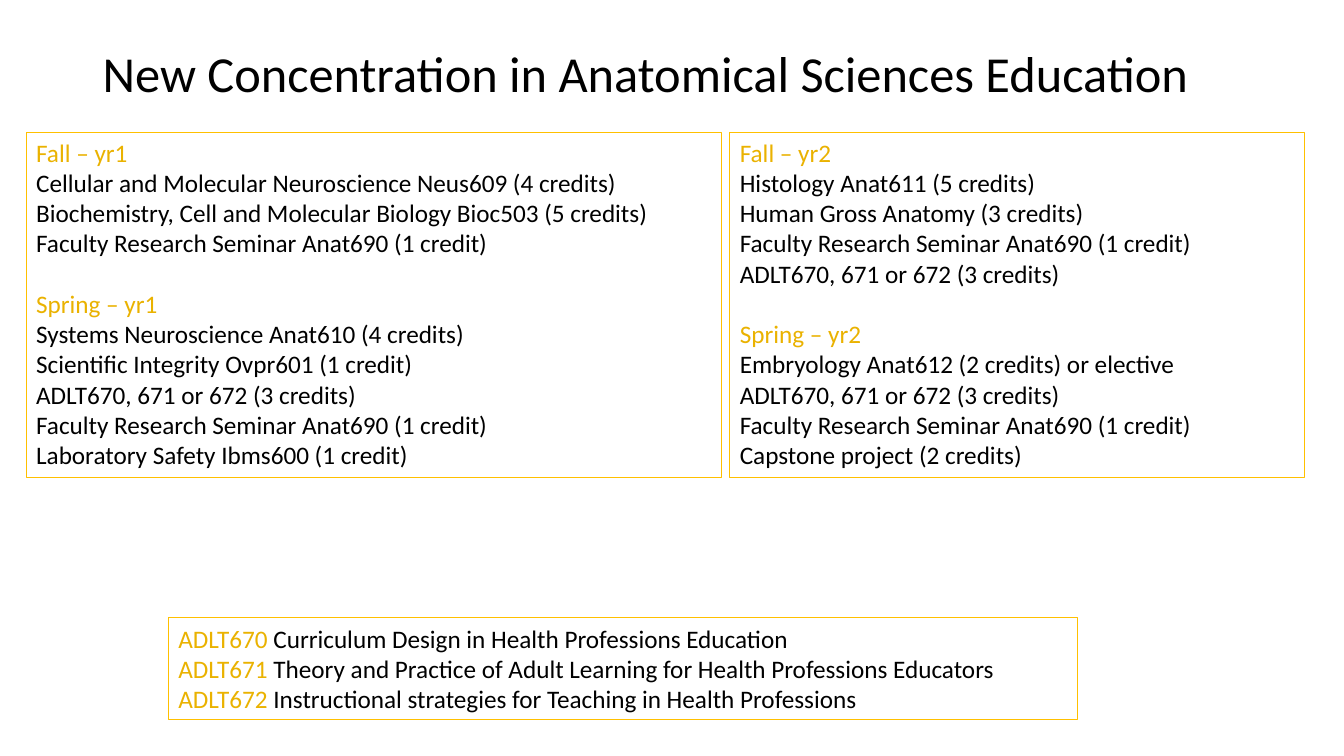
import pptx
import pptx.util
import pptx.dml.color
import pptx.enum.shapes
import pptx.enum.text
from dataclasses import dataclass

Pt = pptx.util.Pt
RGB = pptx.dml.color.RGBColor


@dataclass(frozen=True)
class Theme:
    font: str = "Calibri"
    title: float = 36
    body: float = 18
    text: RGB = RGB.from_string("000000")
    accent: RGB = RGB.from_string("EAB200")
    border: RGB = RGB.from_string("FFC000")


theme = Theme()
prs = pptx.Presentation()
prs.slide_width = pptx.util.Inches(13.33)
prs.slide_height = pptx.util.Inches(7.5)
W, H = prs.slide_width, prs.slide_height
s = prs.slides.add_slide(prs.slide_layouts[6])


def add_box(left, top, width, height, paragraphs):
    """Add an outlined box, placed in shares of the slide; each paragraph is (runs, space before)."""
    sp = s.shapes.add_shape(pptx.enum.shapes.MSO_SHAPE.RECTANGLE,
                            int(left * W), int(top * H), int(width * W), int(height * H))
    sp.shadow.inherit = False
    sp.fill.background()
    sp.line.color.rgb = theme.border
    sp.line.width = Pt(0.75)
    tf = sp.text_frame
    tf.word_wrap = True
    tf.vertical_anchor = pptx.enum.text.MSO_ANCHOR.TOP
    for i, (runs, gap) in enumerate(paragraphs):
        p = tf.paragraphs[0] if i == 0 else tf.add_paragraph()
        p.alignment = pptx.enum.text.PP_ALIGN.LEFT
        p.font.name, p.font.size = theme.font, Pt(theme.body)
        if gap:
            p.space_before = Pt(gap)
        for text, color in runs:
            r = p.add_run()
            r.text = text
            r.font.color.rgb = color


# Title
sp = s.shapes.add_textbox(int(0.069 * W), int(0.0533 * H), int(0.8627 * W), int(0.096 * H))
tf = sp.text_frame
tf.word_wrap = True
tf.vertical_anchor = pptx.enum.text.MSO_ANCHOR.MIDDLE
p = tf.paragraphs[0]
p.text = "New Concentration in Anatomical Sciences Education"
p.line_spacing = 0.9
p.font.name, p.font.size = theme.font, Pt(theme.title)
p.font.color.rgb = theme.text

# One box per year, with one block of courses per semester
years = [
    (0.0195, 0.5176, {
        "Fall – yr1": [
            "Cellular and Molecular Neuroscience Neus609 (4 credits)",
            "Biochemistry, Cell and Molecular Biology Bioc503 (5 credits)",
            "Faculty Research Seminar Anat690 (1 credit)"],
        "Spring – yr1": [
            "Systems Neuroscience Anat610 (4 credits)",
            "Scientific Integrity Ovpr601 (1 credit)",
            "ADLT670, 671 or 672 (3 credits)",
            "Faculty Research Seminar Anat690 (1 credit)",
            "Laboratory Safety Ibms600 (1 credit)"]}),
    (0.5431, 0.4276, {
        "Fall – yr2": [
            "Histology Anat611 (5 credits)",
            "Human Gross Anatomy (3 credits)",
            "Faculty Research Seminar Anat690 (1 credit)",
            "ADLT670, 671 or 672 (3 credits)"],
        "Spring – yr2": [
            "Embryology Anat612 (2 credits) or elective",
            "ADLT670, 671 or 672 (3 credits)",
            "Faculty Research Seminar Anat690 (1 credit)",
            "Capstone project (2 credits)"]}),
]
semester_gap = 1.2 * theme.body
for left, width, semesters in years:
    paragraphs = []
    for semester, courses in semesters.items():
        paragraphs.append(([(semester, theme.accent)], semester_gap if paragraphs else 0))
        paragraphs += [([(course, theme.text)], 0) for course in courses]
    add_box(left, 0.1747, width, 0.4573, paragraphs)

# Key to the course codes
course_key = {
    "ADLT670 ": "Curriculum Design in Health Professions Education",
    "ADLT671 ": "Theory and Practice of Adult Learning for Health Professions Educators",
    "ADLT672 ": "Instructional strategies for Teaching in Health Professions",
}
add_box(0.1253, 0.8173, 0.6767, 0.1347,
        [([(code, theme.accent), (name, theme.text)], 0) for code, name in course_key.items()])

prs.save("out.pptx")
